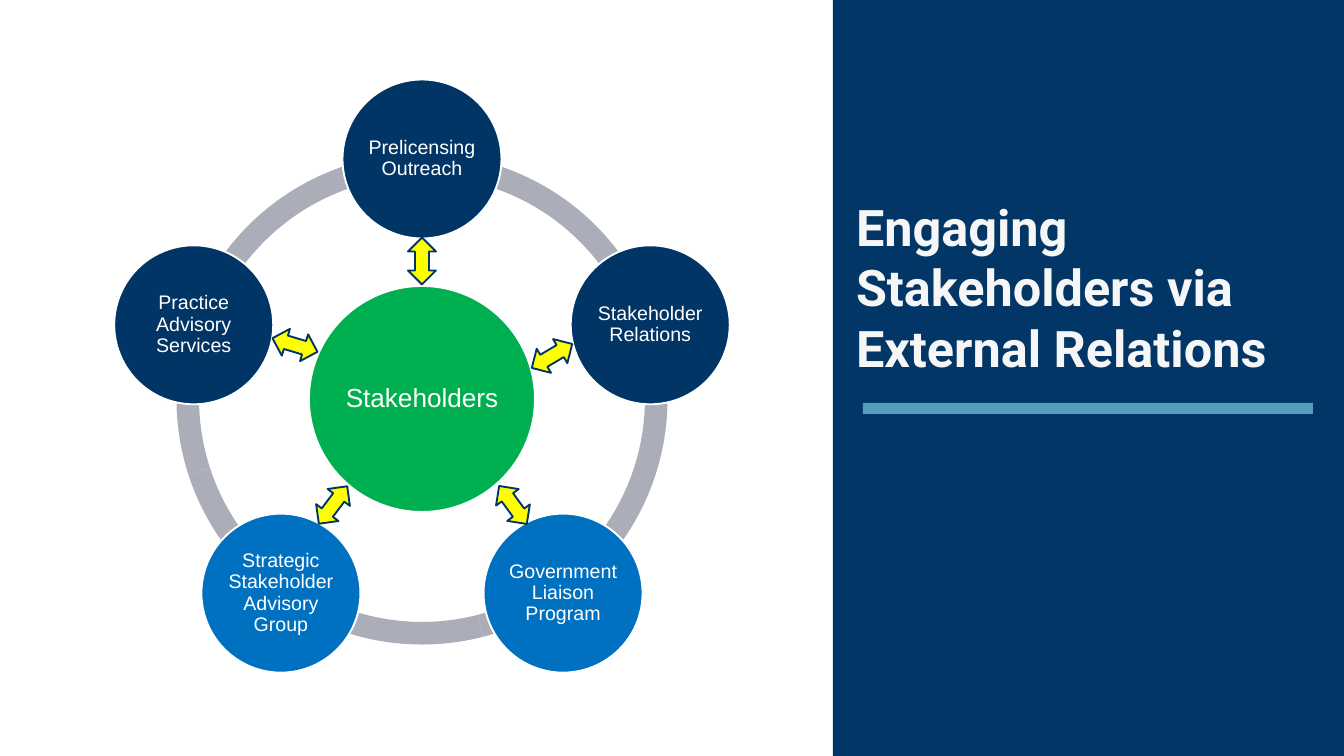
import math
from dataclasses import dataclass

import pptx
import pptx.dml.color
import pptx.enum.shapes
import pptx.enum.text
import pptx.util

EMU_PER_PX = 914400 / 67.2
SHAPE = pptx.enum.shapes.MSO_SHAPE
ALIGN = pptx.enum.text.PP_ALIGN
ANCHOR = pptx.enum.text.MSO_ANCHOR


@dataclass(frozen=True)
class Theme:
    panel: str = "013667"
    rule: str = "569CBF"
    ring: str = "ABAEB8"
    hub: str = "00B050"
    navy: str = "003566"
    blue: str = "0070C0"
    arrow: str = "FFFF00"
    white: str = "FFFFFF"
    title_text: str = "F6F6F6"
    title_font: str = "Roboto"
    body_font: str = "Arial"
    title_size: int = 54
    hub_size: int = 28
    satellite_size: int = 21
    outline: int = 2


def px(length):
    return pptx.util.Emu(round(length * EMU_PER_PX))


def rgb(colour):
    return pptx.dml.color.RGBColor.from_string(colour)


def write(frame, text, *, font, size, colour, bold=False, align=ALIGN.LEFT,
          anchor=ANCHOR.TOP, margin=0, spacing=1.0):
    frame.word_wrap = True
    frame.auto_size = pptx.enum.text.MSO_AUTO_SIZE.NONE
    frame.vertical_anchor = anchor
    frame.margin_left = frame.margin_right = px(margin)
    frame.margin_top = frame.margin_bottom = px(margin)
    frame.text = text
    for paragraph in frame.paragraphs:
        paragraph.alignment = align
        paragraph.line_spacing = spacing
        for run in paragraph.runs:
            run.font.name = font
            run.font.size = pptx.util.Pt(size)
            run.font.bold = bold
            run.font.color.rgb = rgb(colour)


class Canvas:
    def __init__(self, slide, theme):
        self.slide = slide
        self.theme = theme

    def block(self, kind, left, top, width, height, fill, outline=None):
        block = self.slide.shapes.add_shape(kind, px(left), px(top), px(width), px(height))
        block.shadow.inherit = False
        block.fill.solid()
        block.fill.fore_color.rgb = rgb(fill)
        if outline:
            block.line.color.rgb = rgb(outline)
            block.line.width = pptx.util.Pt(self.theme.outline)
        else:
            block.line.fill.background()
        return block

    def centred(self, kind, x, y, width, height, fill, outline=None):
        return self.block(kind, x - width / 2, y - height / 2, width, height, fill, outline)

    def title(self, text, left, top, width, height):
        heading = self.slide.shapes.title
        heading.left, heading.top = px(left), px(top)
        heading.width, heading.height = px(width), px(height)
        write(heading.text_frame, text, font=self.theme.title_font,
              size=self.theme.title_size, colour=self.theme.title_text, bold=True)
        heading.element.getparent().append(heading.element)

    def arc(self, x, y, diameter, start, end):
        arc = self.centred(SHAPE.BLOCK_ARC, x, y, diameter, diameter, self.theme.ring)
        arc.adjustments[0] = start * 0.6
        arc.adjustments[1] = end * 0.6
        arc.adjustments[2] = 0.046

    def circle(self, text, x, y, diameter, fill, size):
        circle = self.centred(SHAPE.OVAL, x, y, diameter, diameter, fill, self.theme.white)
        write(circle.text_frame, text, font=self.theme.body_font, size=size,
              colour=self.theme.white, align=ALIGN.CENTER, anchor=ANCHOR.MIDDLE,
              margin=2, spacing=0.9)

    def arrow(self, x, y, rotation):
        arrow = self.centred(SHAPE.UP_DOWN_ARROW, x, y, 28, 47,
                             self.theme.arrow, self.theme.navy)
        arrow.rotation = rotation


def main():
    theme = Theme()
    deck = pptx.Presentation()
    deck.slide_width, deck.slide_height = px(1344), px(756)
    canvas = Canvas(deck.slides.add_slide(deck.slide_layouts[5]), theme)

    canvas.block(SHAPE.RECTANGLE, 833, 0, 511, 756, theme.panel)
    canvas.title("Engaging Stakeholders via \vExternal Relations", 856, 196, 481, 183)
    canvas.block(SHAPE.RECTANGLE, 863, 403, 450, 11, theme.rule)

    hub_x, hub_y, orbit = 422, 399, 240
    joints = [32.4 + 43.2 * step for step in range(5)]
    for start, end in zip(joints, joints[1:] + joints[:1]):
        canvas.arc(hub_x, hub_y, 491, start, end)

    canvas.circle("Stakeholders", hub_x, hub_y, 226, theme.hub, theme.hub_size)

    satellites = [
        ("Prelicensing Outreach", theme.navy),
        ("Stakeholder Relations", theme.navy),
        ("Government Liaison Program", theme.blue),
        ("Strategic Stakeholder Advisory Group", theme.blue),
        ("Practice Advisory Services", theme.navy),
    ]
    for position, (name, fill) in enumerate(satellites):
        angle = math.tau * position / len(satellites)
        canvas.circle(name, hub_x + orbit * math.sin(angle),
                      hub_y - orbit * math.cos(angle), 159, fill, theme.satellite_size)

    for x, y, rotation in [(333, 505, 217.1), (295, 345, 286.8), (422, 261, 0),
                           (513, 505, 324), (552, 356, 59.3)]:
        canvas.arrow(x, y, rotation)

    deck.save("out.pptx")


if __name__ == "__main__":
    main()
